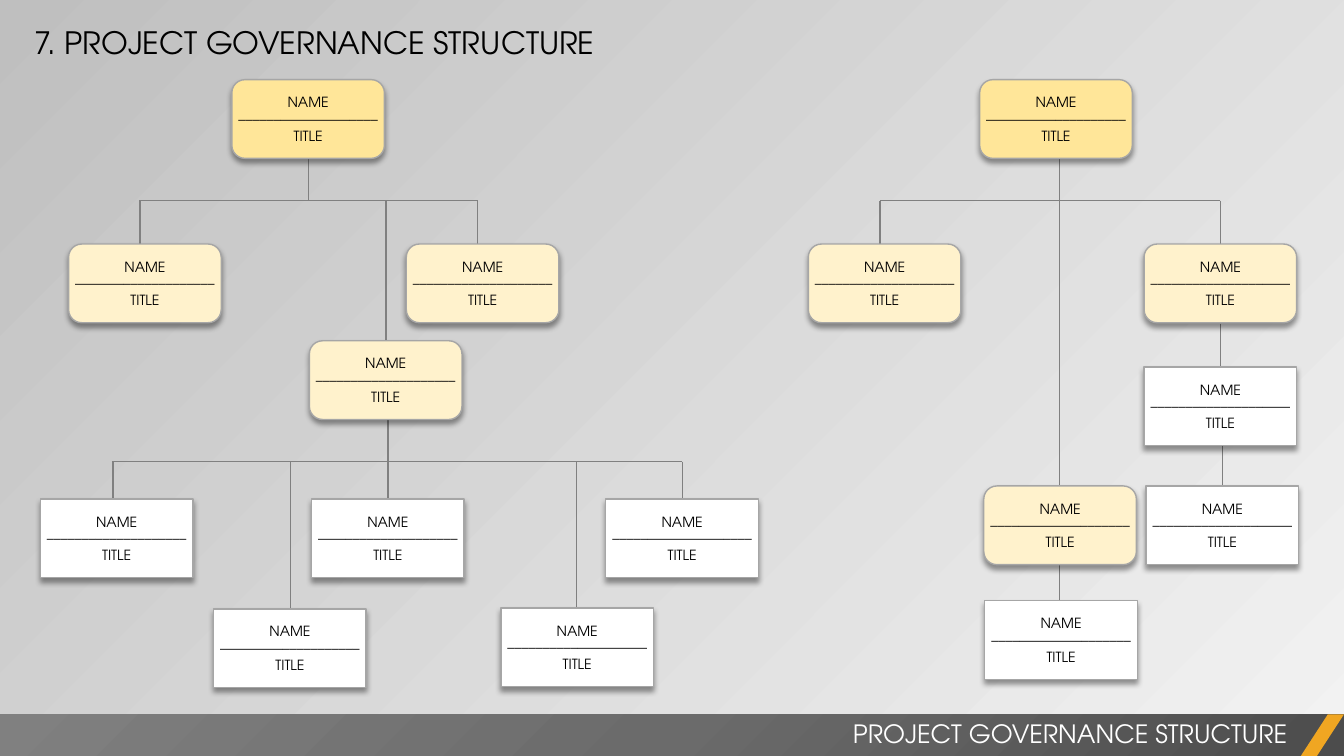
from dataclasses import dataclass

from lxml import etree
from pptx import Presentation
from pptx import util as u
from pptx.dml.color import RGBColor
from pptx.enum import shapes, text
from pptx.oxml import ns

Pt = u.Pt
A = ns.nsdecls("a")


@dataclass(frozen=True)
class Theme:
    font: str = "TeX Gyre Adventor"
    title_size: int = 22
    banner_size: int = 18
    card_size: int = 10
    ink: str = "000000"
    white: str = "FFFFFF"
    lead: str = "FFE699"
    manager: str = "FFF2CC"
    border: str = "A6A6A6"
    connector: str = "808080"
    accent: str = "F0A622"
    backdrop: tuple = ("F2F2F2", "BFBFBF")
    banner: tuple = ("4C4C4C", "6B6B6B", "808080")


THEME = Theme()
SLIDE_W, SLIDE_H = 960, 540
CARD_W, CARD_H = 109, 56.2
RULE = "–" * 20
ROUNDED = shapes.MSO_SHAPE.FLOWCHART_ALTERNATE_PROCESS
SQUARE = shapes.MSO_SHAPE.RECTANGLE
# Rank: outline and fill
RANKS = {
    "lead": (ROUNDED, THEME.lead),
    "manager": (ROUNDED, THEME.manager),
    "staff": (SQUARE, THEME.white),
}

# Positions are relative to the top left corner of each tree.
# A branch is a trunk (x, top, bottom), a bus (left, right, y)
# and drops that hang from the bus (x, bottom).
LEFT_TREE = {
    "branches": [
        ((191.5, 48.9, 85.7), (70.6, 312.5, 86.4),
         [(71.3, 122.4), (247, 215), (312.5, 122.4)]),
        ((248.4, 240.5, 329), (51.1, 458.6, 272.9),
         [(51.8, 309.6), (178.6, 383.7), (383, 383), (458.6, 309.6)]),
    ],
    "links": [],
    "cards": {
        "lead": [(136.8, 0)],
        "manager": [(20.2, 117.4), (261.4, 117.4), (192.2, 186.5)],
        "staff": [(0, 299.5), (193.7, 299.5), (403.9, 299.5),
                  (123.8, 378), (329, 377.3)],
    },
}
RIGHT_TREE = {
    "branches": [
        ((179.3, 48.9, 85.7), (51.2, 293.8, 86.4),
         [(51.2, 122.4), (179.3, 383.7), (294.5, 122.4)]),
    ],
    "links": [(294.5, 174.2, 210.2), (296, 258.5, 295.2)],
    "cards": {
        "lead": [(122.4, 0)],
        "manager": [(0, 117.4), (239.8, 117.4), (125.3, 290.2)],
        "staff": [(239.8, 205.2), (241.2, 290.2), (126, 372.2)],
    },
}


def color(value):
    return RGBColor.from_string(value)


def add_run(paragraph, words, size, ink):
    run = paragraph.add_run()
    run.text = words
    run.font.name = THEME.font
    run.font.size = Pt(size)
    run.font.color.rgb = color(ink)


def add_label(slide, box, words, size, ink, align):
    label = slide.shapes.add_textbox(*map(Pt, box))
    frame = label.text_frame
    frame.word_wrap = True
    frame.auto_size = text.MSO_AUTO_SIZE.SHAPE_TO_FIT_TEXT
    frame.paragraphs[0].alignment = align
    add_run(frame.paragraphs[0], words, size, ink)


def add_block(slide, outline, box, fill):
    block = slide.shapes.add_shape(outline, *map(Pt, box))
    block.shadow.inherit = False
    block.fill.solid()
    block.fill.fore_color.rgb = color(fill)
    block.line.fill.background()
    return block


def add_connector(slide, x1, y1, x2, y2):
    connector = slide.shapes.add_connector(
        shapes.MSO_CONNECTOR.STRAIGHT, Pt(x1), Pt(y1), Pt(x2), Pt(y2))
    connector.line.color.rgb = color(THEME.connector)
    connector.line.width = Pt(1)
    etree.SubElement(connector._element.spPr, ns.qn("a:effectLst"))


def add_card(slide, left, top, rank):
    outline, fill = RANKS[rank]
    card = add_block(slide, outline, (left, top, CARD_W, CARD_H), fill)
    card.line.color.rgb = color(THEME.border)
    card.line.width = Pt(1)
    # Soft shadow straight below the card
    effects = card._element.spPr.find(ns.qn("a:effectLst"))
    effects.append(etree.fromstring(
        f'<a:outerShdw {A} blurRad="{Pt(4)}" dist="{Pt(3)}" dir="5400000" '
        'algn="t" rotWithShape="0"><a:srgbClr val="000000">'
        '<a:alpha val="40000"/></a:srgbClr></a:outerShdw>'))
    # Name, rule and title
    frame = card.text_frame
    frame.word_wrap = True
    frame.vertical_anchor = text.MSO_ANCHOR.MIDDLE
    frame.margin_left = frame.margin_right = Pt(1.44)
    frame.margin_top = frame.margin_bottom = Pt(1.44)
    for index, words in enumerate(("NAME", RULE, "TITLE")):
        paragraph = frame.add_paragraph() if index else frame.paragraphs[0]
        paragraph.alignment = text.PP_ALIGN.CENTER
        add_run(paragraph, words, THEME.card_size, THEME.ink)


def add_tree(slide, left, top, tree):
    # Connectors lie behind the cards
    verticals = list(tree["links"])
    for trunk, (bus_left, bus_right, bus_y), drops in tree["branches"]:
        verticals.append(trunk)
        verticals += [(x, bus_y, bottom) for x, bottom in drops]
        add_connector(slide, left + bus_left, top + bus_y,
                      left + bus_right, top + bus_y)
    for x, start, end in verticals:
        add_connector(slide, left + x, top + start, left + x, top + end)
    for rank, corners in tree["cards"].items():
        for x, y in corners:
            add_card(slide, left + x, top + y, rank)


def add_backdrop(slide):
    fill = slide.background.fill
    fill.gradient()
    fill.gradient_angle = 135
    for stop, shade in zip(fill.gradient_stops, THEME.backdrop):
        stop.color.rgb = color(shade)
    for stop, position in zip(fill.gradient_stops, (0, 1)):
        stop.position = position


def add_banner(slide, left, top, width, height):
    # Bar with a radial gradient from its lower right corner
    bar = add_block(slide, SQUARE, (left, top, width, height), THEME.banner[0])
    stops = "".join(
        f'<a:gs pos="{index * 50000}"><a:srgbClr val="{shade}"/></a:gs>'
        for index, shade in enumerate(THEME.banner))
    properties = bar._element.spPr
    properties.replace(properties.find(ns.qn("a:solidFill")), etree.fromstring(
        f'<a:gradFill {A} rotWithShape="1"><a:gsLst>{stops}</a:gsLst>'
        '<a:path path="circle"><a:fillToRect l="100000" t="100000"/></a:path>'
        '</a:gradFill>'))
    # Slanted accent and caption
    accent_w = 31
    accent = add_block(slide, shapes.MSO_SHAPE.PARALLELOGRAM,
                       (left + width - accent_w, top, accent_w, height),
                       THEME.accent)
    accent.adjustments[0] = 0.65
    add_label(slide, (left + 378, top - 0.7, 548.6, 29), "PROJECT GOVERNANCE STRUCTURE",
              THEME.banner_size, THEME.white, text.PP_ALIGN.RIGHT)


def main():
    deck = Presentation()
    deck.slide_width, deck.slide_height = Pt(SLIDE_W), Pt(SLIDE_H)
    slide = deck.slides.add_slide(deck.slide_layouts[6])
    add_backdrop(slide)
    add_banner(slide, 0, 510.3, SLIDE_W, 30)
    add_tree(slide, 28.8, 56.9, LEFT_TREE)
    add_tree(slide, 577.4, 56.9, RIGHT_TREE)
    add_label(slide, (17.3, 13.7, 480.2, 33.9), "7. PROJECT GOVERNANCE STRUCTURE",
              THEME.title_size, THEME.ink, text.PP_ALIGN.LEFT)
    deck.save("out.pptx")


if __name__ == "__main__":
    main()
